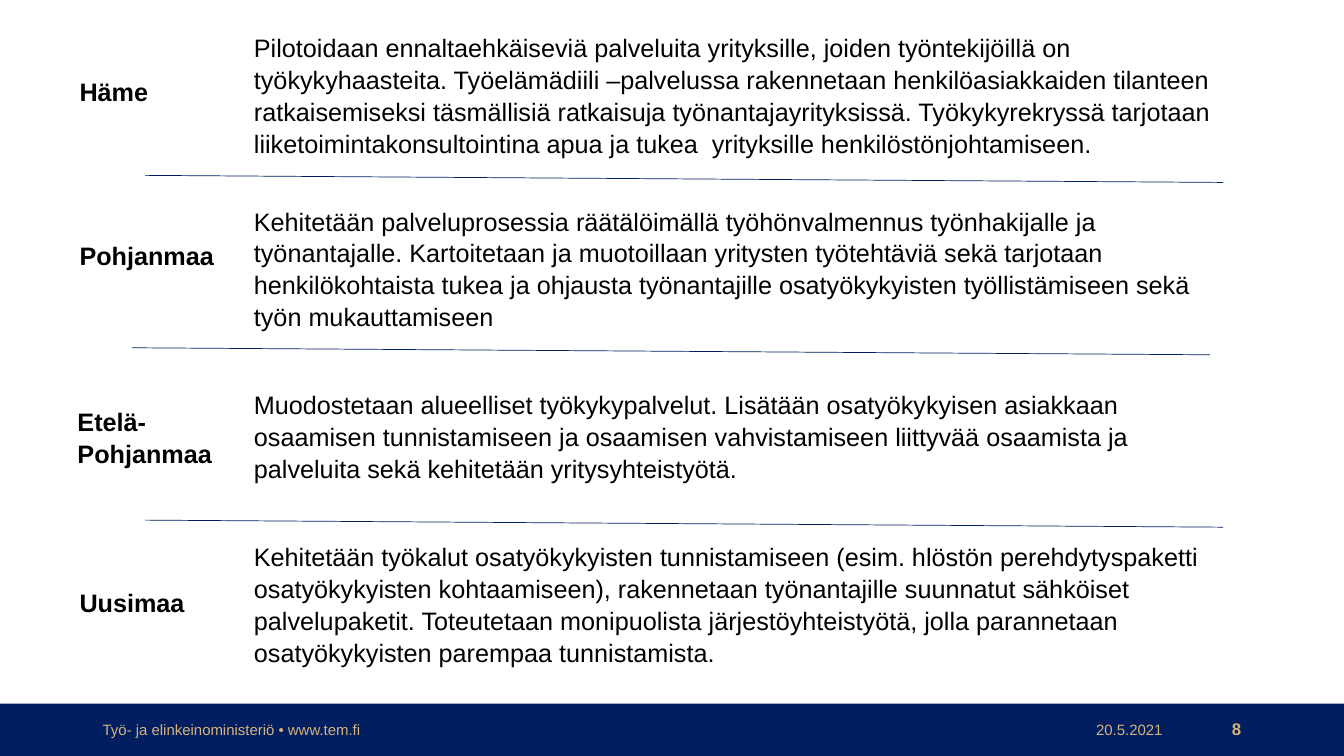
from dataclasses import dataclass

import pptx
import pptx.dml.color
import pptx.enum.shapes
import pptx.enum.text
import pptx.oxml
import pptx.oxml.ns
import pptx.slide
import pptx.util

Inches = pptx.util.Inches
Align = pptx.enum.text.PP_ALIGN
Anchor = pptx.enum.text.MSO_ANCHOR
AutoSize = pptx.enum.text.MSO_AUTO_SIZE


@dataclass(frozen=True)
class Theme:
    font: str = "Arial"
    navy: str = "001E60"
    gold: str = "D5B37A"
    black: str = "000000"
    body_size: float = 18
    number_size: float = 12
    footer_size: float = 10.7
    rule_width: float = 0.5
    body_spacing: float = 1.05


@dataclass(frozen=True)
class Region:
    name: str
    name_left: float
    name_top: float
    name_height: float
    description: str
    top: float
    height: float


@dataclass(frozen=True)
class Divider:
    left: float
    top: float


@dataclass(frozen=True)
class FooterItem:
    text: str
    left: float
    width: float
    size: float
    align: Align = Align.RIGHT
    bold: bool = False


THEME = Theme()
NAME_WIDTH = 2.32
DESCRIPTION_LEFT, DESCRIPTION_WIDTH = 2.42, 9.71
DIVIDER_WIDTH, DIVIDER_DROP = 10.69, 0.07

REGIONS = [
    Region(
        "Häme", 0.69, 0.69, 0.4,
        "Pilotoidaan ennaltaehkäiseviä palveluita yrityksille, joiden työntekijöillä on "
        "työkykyhaasteita. Työelämädiili –palvelussa rakennetaan henkilöasiakkaiden tilanteen "
        "ratkaisemiseksi täsmällisiä ratkaisuja työnantajayrityksissä. Työkykyrekryssä tarjotaan "
        "liiketoimintakonsultointina apua ja tukea  yrityksille henkilöstönjohtamiseen.",
        0.26, 1.31,
    ),
    Region(
        "Pohjanmaa", 0.69, 2.32, 0.4,
        "Kehitetään palveluprosessia räätälöimällä työhönvalmennus työnhakijalle ja "
        "työnantajalle. Kartoitetaan ja muotoillaan yritysten työtehtäviä sekä tarjotaan "
        "henkilökohtaista tukea ja ohjausta työnantajille osatyökykyisten työllistämiseen sekä "
        "työn mukauttamiseen",
        1.98, 1.31,
    ),
    Region(
        "Etelä-\nPohjanmaa", 0.67, 3.97, 0.71,
        "Muodostetaan alueelliset työkykypalvelut. Lisätään osatyökykyisen asiakkaan "
        "osaamisen tunnistamiseen ja osaamisen vahvistamiseen liittyvää osaamista ja "
        "palveluita sekä kehitetään yritysyhteistyötä.",
        3.8, 1.01,
    ),
    Region(
        "Uusimaa", 0.69, 5.76, 0.4,
        "Kehitetään työkalut osatyökykyisten tunnistamiseen (esim. hlöstön perehdytyspaketti "
        "osatyökykyisten kohtaamiseen), rakennetaan työnantajille suunnatut sähköiset "
        "palvelupaketit. Toteutetaan monipuolista järjestöyhteistyötä, jolla parannetaan "
        "osatyökykyisten parempaa tunnistamista.",
        5.31, 1.31,
    ),
]
DIVIDERS = [Divider(1.44, 1.74), Divider(1.31, 3.45), Divider(1.44, 5.16)]
FOOTER_ITEMS = [
    FooterItem("8", 11.63, 0.78, THEME.number_size, bold=True),
    FooterItem("20.5.2021", 10.6, 1.03, THEME.footer_size),
    FooterItem("Työ- ja elinkeinoministeriö • www.tem.fi", 0.92, 4.49,
               THEME.footer_size, Align.LEFT),
]


def color(value: str) -> pptx.dml.color.RGBColor:
    return pptx.dml.color.RGBColor.from_string(value)


def add_text(slide: pptx.slide.Slide, text: str, *, left: float, top: float,
             width: float, height: float, size: float = THEME.body_size,
             fill: str = THEME.black, bold: bool = False, align: Align = Align.LEFT,
             anchor: Anchor = Anchor.TOP, spacing: float = THEME.body_spacing,
             auto_size: AutoSize = AutoSize.SHAPE_TO_FIT_TEXT) -> None:
    shape = slide.shapes.add_textbox(Inches(left), Inches(top), Inches(width), Inches(height))
    frame = shape.text_frame
    frame.word_wrap = True
    frame.auto_size = auto_size
    frame.vertical_anchor = anchor
    frame.text = text
    for paragraph in frame.paragraphs:
        paragraph.alignment = align
        paragraph.line_spacing = spacing
        for run in paragraph.runs:
            run.font.name = THEME.font
            run.font.size = pptx.util.Pt(size)
            run.font.bold = bold
            run.font.color.rgb = color(fill)


def add_region(slide: pptx.slide.Slide, region: Region) -> None:
    add_text(slide, region.name, left=region.name_left, top=region.name_top,
             width=NAME_WIDTH, height=region.name_height, bold=True)
    add_text(slide, region.description, left=DESCRIPTION_LEFT, top=region.top,
             width=DESCRIPTION_WIDTH, height=region.height)


def add_divider(slide: pptx.slide.Slide, divider: Divider) -> None:
    connector = slide.shapes.add_connector(
        pptx.enum.shapes.MSO_CONNECTOR.STRAIGHT,
        Inches(divider.left), Inches(divider.top),
        Inches(divider.left + DIVIDER_WIDTH), Inches(divider.top + DIVIDER_DROP))
    connector.line.color.rgb = color(THEME.navy)
    connector.line.width = pptx.util.Pt(THEME.rule_width)
    properties = connector.element.find(pptx.oxml.ns.qn("p:spPr"))
    properties.append(pptx.oxml.parse_xml(
        f"<a:effectLst {pptx.oxml.ns.nsdecls('a')}/>"))


def add_footer(slide: pptx.slide.Slide) -> None:
    bar = slide.shapes.add_shape(pptx.enum.shapes.MSO_SHAPE.RECTANGLE,
                                 Inches(0), Inches(6.98), Inches(13.33), Inches(0.52))
    bar.shadow.inherit = False
    bar.fill.solid()
    bar.fill.fore_color.rgb = color(THEME.navy)
    bar.line.fill.background()
    for item in FOOTER_ITEMS:
        add_text(slide, item.text, left=item.left, top=7.12, width=item.width, height=0.23,
                 size=item.size, fill=THEME.gold, bold=item.bold, align=item.align,
                 anchor=Anchor.MIDDLE, spacing=1.0, auto_size=AutoSize.NONE)


def main() -> None:
    presentation = pptx.Presentation()
    presentation.slide_width = Inches(13.33)
    presentation.slide_height = Inches(7.5)
    slide = presentation.slides.add_slide(presentation.slide_layouts[6])
    add_footer(slide)
    for divider in DIVIDERS:
        add_divider(slide, divider)
    for region in REGIONS:
        add_region(slide, region)
    presentation.save("out.pptx")


if __name__ == "__main__":
    main()
